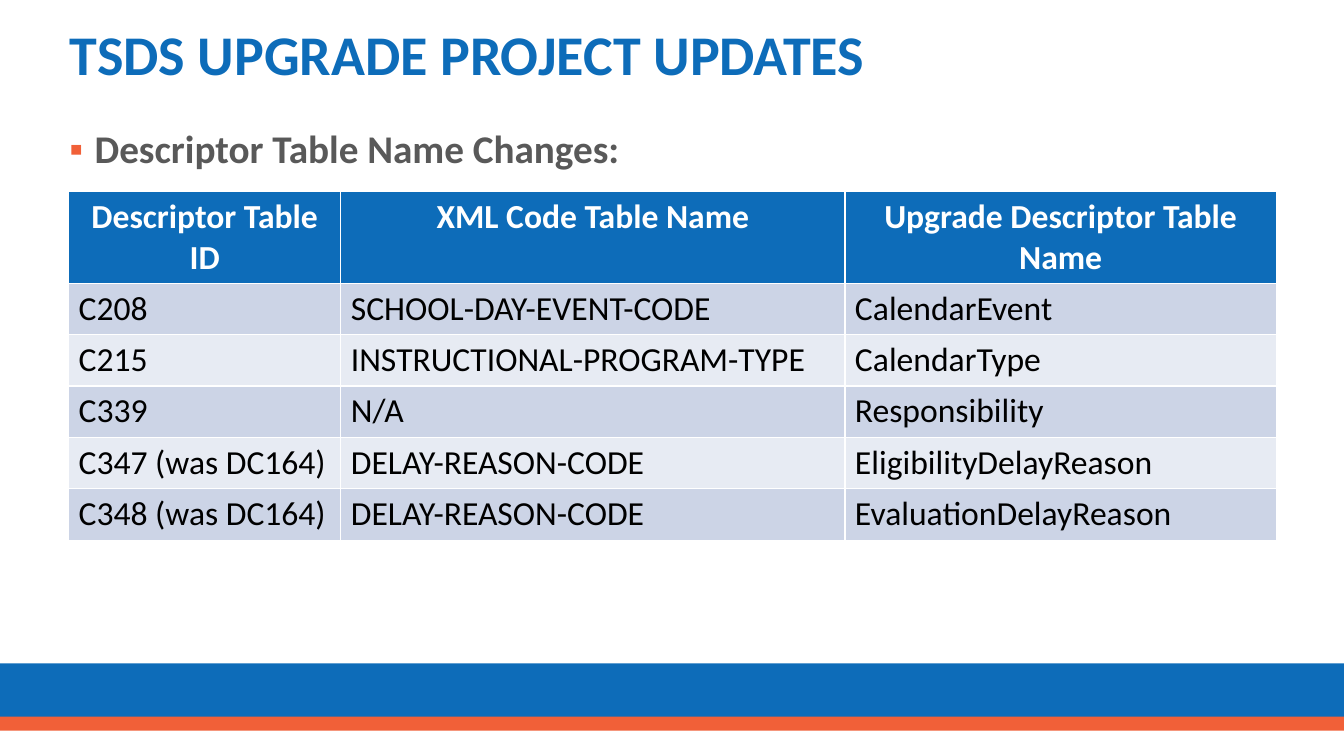
from dataclasses import dataclass

from lxml import etree
from pptx import Presentation
from pptx.dml.color import RGBColor
from pptx.enum.shapes import MSO_SHAPE
from pptx.enum.text import MSO_ANCHOR, MSO_AUTO_SIZE, PP_ALIGN
from pptx.oxml.ns import qn
from pptx.util import Inches, Pt

RECT = MSO_SHAPE.RECTANGLE
MIDDLE = MSO_ANCHOR.MIDDLE
FIXED = MSO_AUTO_SIZE.NONE
LEFT, CENTER = PP_ALIGN.LEFT, PP_ALIGN.CENTER


@dataclass(frozen=True)
class Theme:
    """Colours and type sizes of the slide."""
    font: str = "Calibri"
    blue: str = "0D6CB9"
    orange: str = "F16038"
    gray: str = "595959"
    white: str = "FFFFFF"
    black: str = "000000"
    bands: tuple = ("CCD4E6", "E7EBF3")
    title: int = 40
    lead: int = 28
    cell: int = 24


THEME = Theme()
HEADS = ("Descriptor Table ID", "XML Code Table Name",
         "Upgrade Descriptor Table Name")
ROWS = (
    ("C208", "SCHOOL-DAY-EVENT-CODE", "CalendarEvent"),
    ("C215", "INSTRUCTIONAL-PROGRAM-TYPE", "CalendarType"),
    ("C339", "N/A", "Responsibility"),
    ("C347 (was DC164)", "DELAY-REASON-CODE", "EligibilityDelayReason"),
    ("C348 (was DC164)", "DELAY-REASON-CODE", "EvaluationDelayReason"),
)
WIDTHS = (2.7, 5, 4.28)
HEAD_H, ROW_H = 0.91, 0.51


def paint(fill, color):
    """Give a fill one solid colour."""
    fill.solid()
    fill.fore_color.rgb = RGBColor.from_string(color)


def style(para, size, color, bold=False, align=LEFT):
    """Format a paragraph and its runs."""
    para.alignment = align
    for run in para.runs:
        font = run.font
        font.name, font.size, font.bold = THEME.font, Pt(size), bold
        font.color.rgb = RGBColor.from_string(color)


def add_bullet(para, char, color, indent):
    """Add a coloured bullet with a hanging indent."""
    props = para._p.get_or_add_pPr()
    props.set("marL", str(Inches(indent)))
    props.set("indent", str(-Inches(indent)))
    tint = etree.SubElement(props, qn("a:buClr"))
    etree.SubElement(tint, qn("a:srgbClr"), val=color)
    etree.SubElement(props, qn("a:buFont"), typeface="Arial")
    etree.SubElement(props, qn("a:buChar"), char=char)


def add_footer(slide, left, top, width):
    """Draw the blue and orange bars across the foot."""
    bars = ((0, 0.58, THEME.blue), (0.53, 0.14, THEME.orange))
    for drop, height, color in bars:
        bar = slide.shapes.add_shape(RECT, Inches(left), Inches(top + drop),
                                     Inches(width), Inches(height))
        bar.shadow.inherit = False
        paint(bar.fill, color)
        bar.line.fill.background()


def set_title(slide, left, top, width, height):
    """Place and format the title."""
    title = slide.shapes.title
    title.left, title.top = Inches(left), Inches(top)
    title.width, title.height = Inches(width), Inches(height)
    frame = title.text_frame
    frame.text = "TSDS UPGRADE PROJECT UPDATES"
    frame.auto_size, frame.vertical_anchor = FIXED, MIDDLE
    para = frame.paragraphs[0]
    para.line_spacing = 0.9
    style(para, THEME.title, THEME.blue, True)


def add_lead(slide, left, top, width, height):
    """Add the bulleted line that leads into the table."""
    box = slide.shapes.add_textbox(Inches(left), Inches(top),
                                   Inches(width), Inches(height))
    frame = box.text_frame
    frame.word_wrap = True
    para = frame.paragraphs[0]
    para.text = "Descriptor Table Name Changes:"
    para.line_spacing = 0.9
    add_bullet(para, "▪", THEME.orange, 0.25)
    style(para, THEME.lead, THEME.gray, True)


def add_names(slide, left, top):
    """Add the table of descriptor names."""
    data = (HEADS, *ROWS)
    height = HEAD_H + ROW_H * len(ROWS)
    table = slide.shapes.add_table(
        len(data), len(HEADS), Inches(left), Inches(top),
        Inches(sum(WIDTHS)), Inches(height)).table
    for col, width in zip(table.columns, WIDTHS):
        col.width = Inches(width)
    for i, (row, texts) in enumerate(zip(table.rows, data)):
        row.height = Inches(ROW_H if i else HEAD_H)
        for cell, text in zip(row.cells, texts):
            cell.text = text
            para = cell.text_frame.paragraphs[0]
            if i:
                paint(cell.fill, THEME.bands[(i - 1) % 2])
                style(para, THEME.cell, THEME.black)
            else:
                paint(cell.fill, THEME.blue)
                style(para, THEME.cell, THEME.white, True, CENTER)


def main():
    """Build the slide and save it."""
    deck = Presentation()
    deck.slide_width, deck.slide_height = Inches(13.33), Inches(7.5)
    slide = deck.slides.add_slide(deck.slide_layouts[5])
    add_footer(slide, 0, 6.58, 13.33)
    set_title(slide, 0.59, 0.16, 8.55, 0.82)
    add_lead(slide, 0.59, 1.24, 12.33, 0.6)
    add_names(slide, 0.68, 1.9)
    deck.save("out.pptx")


if __name__ == "__main__":
    main()
